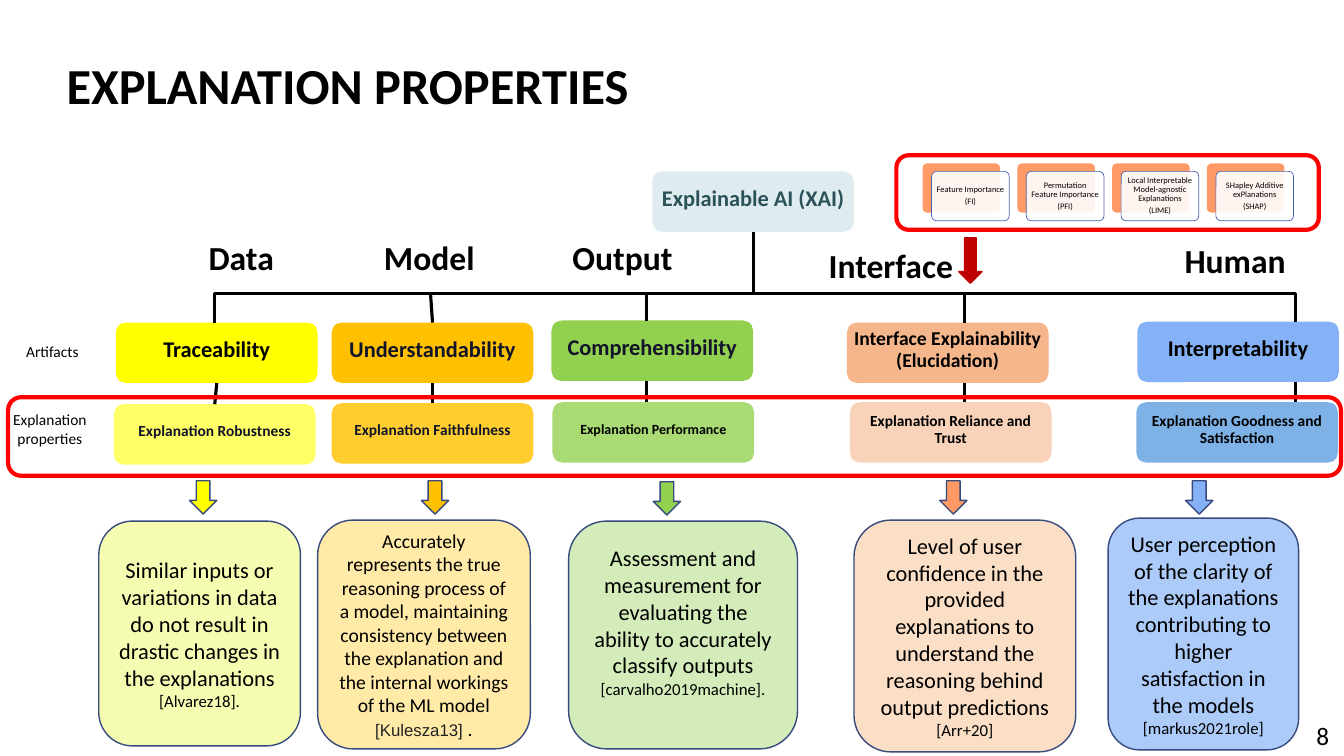
from dataclasses import dataclass

from lxml.etree import SubElement
from pptx import Presentation
from pptx.dml.color import RGBColor
from pptx.enum.shapes import MSO_CONNECTOR, MSO_SHAPE
from pptx.enum.text import MSO_ANCHOR, PP_ALIGN
from pptx.oxml.ns import qn
from pptx.util import Inches, Pt

COLUMNS, ROWS = 1333, 750
CELL = Inches(13.33) / COLUMNS
BUS_ROW = 291
CENTER = PP_ALIGN.CENTER


@dataclass
class Span:
    text: str
    size: int
    color: str = "000000"
    bold: bool = False
    font: str = "Calibri"


@dataclass
class Branch:
    """One column of the tree; boxes are (left, top, width, height) in grid cells."""
    heading: str
    heading_at: tuple
    spine: int
    artifact: Span
    artifact_at: tuple
    artifact_fill: str
    trait: Span
    trait_at: tuple
    trait_fill: str
    arrow_at: tuple
    arrow_fill: str
    detail: list
    detail_at: tuple
    detail_fill: str


BRANCHES = [
    Branch("Data", (197, 230), 213,
           Span("Traceability", 16, bold=True), (115, 320), "FFFF00",
           Span("Explanation Robustness", 11, "121429", True), (113, 401), "FFFF66",
           (188, 477), "FFFF00",
           [[Span("Similar inputs or variations in data do not result in drastic "
                  "changes in the explanations ", 16), Span("[Alvarez18].", 12)]],
           (98, 517, 200, 223), "F5FCB2"),
    Branch("Model", (371, 230), 427,
           Span("Understandability", 16, "121429", True), (329, 320), "FFC000",
           Span("Explanation Faithfulness", 11, "121429", True), (329, 400), "FFCD2D",
           (418, 477), "FFC000",
           [[Span("Accurately represents the true reasoning process of a model, "
                  "maintaining consistency between the explanation and the internal "
                  "workings of the ML model ", 14),
             Span("[Kulesza13] ", 12, "222222", font="Arial"), Span(".", 14)]],
           (315, 516, 211, 227), "FFEAA7"),
    Branch("Output", (558, 230), 641,
           Span("Comprehensibility", 16, "121429", True), (547, 318), "92D050",
           Span("Explanation Performance", 10, bold=True), (548, 399), "A9DA74",
           (648, 478), "92D050",
           [[Span("Assessment and measurement for evaluating the ability to "
                  "accurately classify outputs", 16)],
            [Span("[carvalho2019machine].", 12)]],
           (564, 517, 227, 226), "D4ECBA"),
    Branch("Interface", (812, 238), 957,
           Span("Interface Explainability (Elucidation)", 14, bold=True), (840, 320), "F5B68B",
           Span("Explanation Reliance and Trust", 11, bold=True), (843, 399), "F8D3BA",
           (932, 477), "FF9966",
           [[Span("Level of user confidence in the provided explanations to understand "
                  "the reasoning behind output predictions ", 16), Span("[Arr+20]", 12)]],
           (847, 516, 220, 230), "FADEC6"),
    Branch("Human", (1165, 233), 1285,
           Span("Interpretability", 16, bold=True), (1128, 319), "85B2F6",
           Span("Explanation Goodness and Satisfaction", 11, bold=True), (1127, 399), "7EB2E6",
           (1176, 477), "85B2F6",
           [[Span("User perception of the clarity of the explanations contributing to "
                  "higher satisfaction in the models ", 16), Span("[markus2021role]", 12)]],
           (1099, 514, 189, 230), "ACCBF9"),
]
METHODS = [("Feature Importance", "(FI)"),
           ("Permutation Feature Importance", "(PFI)"),
           ("Local Interpretable Model-agnostic Explanations", "(LIME)"),
           ("SHapley Additive exPlanations", "(SHAP)")]


def cells(*counts):
    return [round(count * CELL) for count in counts]


def rgb(value):
    return RGBColor.from_string(value)


def write(shape, paragraphs, align=CENTER, anchor=MSO_ANCHOR.MIDDLE,
          margins=None, line_spacing=None, space_after=0):
    """Fill a shape with lists of spans; space_after is a share of the text size."""
    frame = shape.text_frame
    frame.word_wrap = True
    frame.vertical_anchor = anchor
    if margins:
        (frame.margin_left, frame.margin_top,
         frame.margin_right, frame.margin_bottom) = cells(*margins)
    for index, spans in enumerate(paragraphs):
        para = frame.add_paragraph() if index else frame.paragraphs[0]
        para.alignment = align
        if line_spacing:
            para.line_spacing = line_spacing
        if space_after:
            para.space_after = Pt(space_after * spans[0].size)
        for span in spans:
            run = para.add_run()
            run.text = span.text
            run.font.size = Pt(span.size)
            run.font.name = span.font
            run.font.bold = span.bold
            run.font.color.rgb = rgb(span.color)


def add_box(page, at, fill=None, line=None, width=1, kind=MSO_SHAPE.ROUNDED_RECTANGLE):
    box = page.shapes.add_shape(kind, *cells(*at))
    box.shadow.inherit = False
    if fill:
        box.fill.solid()
        box.fill.fore_color.rgb = rgb(fill)
    else:
        box.fill.background()
    if line:
        box.line.color.rgb = rgb(line)
        box.line.width = Pt(width)
    else:
        box.line.fill.background()
    return box


def add_node(page, place, fill, span):
    box = add_box(page, (*place, 200, 60), fill)
    write(box, [[span]], margins=(1, 1, 1, 6), line_spacing=0.9, space_after=0.35)
    return box


def add_label(page, at, span, align=PP_ALIGN.LEFT):
    label = page.shapes.add_textbox(*cells(*at))
    write(label, [[span]], align, MSO_ANCHOR.TOP)


def add_line(page, start, end, kind=MSO_CONNECTOR.STRAIGHT):
    line = page.shapes.add_connector(kind, *cells(*start, *end))
    line.line.color.rgb = rgb("000000")
    line.line.width = Pt(2.25)
    properties = line._element.spPr
    SubElement(properties, qn("a:effectLst"))
    if kind == MSO_CONNECTOR.ELBOW:
        guides = properties.find(qn("a:prstGeom")).find(qn("a:avLst"))
        SubElement(guides, qn("a:gd"), name="adj1", fmla="val 100000")
    return line


def add_branch(page, branch, outer):
    artifact = add_node(page, branch.artifact_at, branch.artifact_fill, branch.artifact)
    trait = add_node(page, branch.trait_at, branch.trait_fill, branch.trait)
    top, bottom = branch.artifact_at[1], branch.artifact_at[1] + 60
    centered = abs(branch.artifact_at[0] + 100 - branch.spine) <= 2

    if outer:
        add_line(page, (747, BUS_ROW), (branch.spine, top), MSO_CONNECTOR.ELBOW)
    else:
        riser = add_line(page, (branch.spine, BUS_ROW), (branch.spine, top))
        if centered:
            riser.end_connect(artifact, 0)
    link = add_line(page, (branch.spine, bottom), (branch.spine, branch.trait_at[1]))
    if centered:
        link.begin_connect(artifact, 2)
        link.end_connect(trait, 0)

    add_label(page, (*branch.heading_at, 160, 50), Span(branch.heading, 24, bold=True))
    add_box(page, (*branch.arrow_at, 27, 33), branch.arrow_fill, "374B7F",
            kind=MSO_SHAPE.DOWN_ARROW)
    detail = add_box(page, branch.detail_at, branch.detail_fill, "374B7F")
    bottom_margin = 32 if len(branch.detail) > 1 else 5
    write(detail, branch.detail, margins=(10, 5, 10, bottom_margin))


def add_method_card(page, left, name, short_name):
    back = add_box(page, (left, 162, 77, 49), "FF9966")
    front = add_box(page, (left + 9, 170, 77, 49), "FFFFFF", "4A66AC", 0.5)
    for card in (back, front):
        card.adjustments[0] = 0.1
    color = front._element.spPr.find(qn("a:solidFill"))[0]
    SubElement(color, qn("a:alpha"), val="90000")
    write(front, [[Span(name, 6)], [Span(short_name, 6)]], margins=(3, 3, 3, 3),
          line_spacing=0.9, space_after=0.35)


def main():
    deck = Presentation()
    deck.slide_width, deck.slide_height = cells(COLUMNS, ROWS)
    page = deck.slides.add_slide(deck.slide_layouts[5])

    title = page.shapes.title
    title.left, title.top, title.width, title.height = cells(56, 52, 1150, 70)
    write(title, [[Span("EXPLANATION PROPERTIES", 36, bold=True)]],
          PP_ALIGN.LEFT, line_spacing=0.9)

    root = add_node(page, (647, 170), "DEECEF",
                    Span("Explainable AI (XAI)", 16, "2B5259", True))
    trunk = add_line(page, (747, 230), (747, BUS_ROW))
    trunk.begin_connect(root, 2)
    for branch in BRANCHES:
        add_branch(page, branch, branch in (BRANCHES[0], BRANCHES[-1]))

    add_label(page, (0, 334, 104, 29), Span("Artifacts", 11), CENTER)
    add_label(page, (0, 402, 99, 47), Span("Explanation properties", 11), CENTER)
    add_box(page, (8, 394, 1322, 78), line="FF0000", width=3)

    for index, method in enumerate(METHODS):
        add_method_card(page, 915 + 94 * index, *method)
    add_box(page, (889, 154, 419, 74), line="FF0000", width=3)
    add_box(page, (951, 236, 23, 45), "C00000", "C00000", kind=MSO_SHAPE.DOWN_ARROW)

    add_label(page, (1272, 710, 56, 40), Span("8", 18), PP_ALIGN.RIGHT)
    deck.save("out.pptx")


if __name__ == "__main__":
    main()
